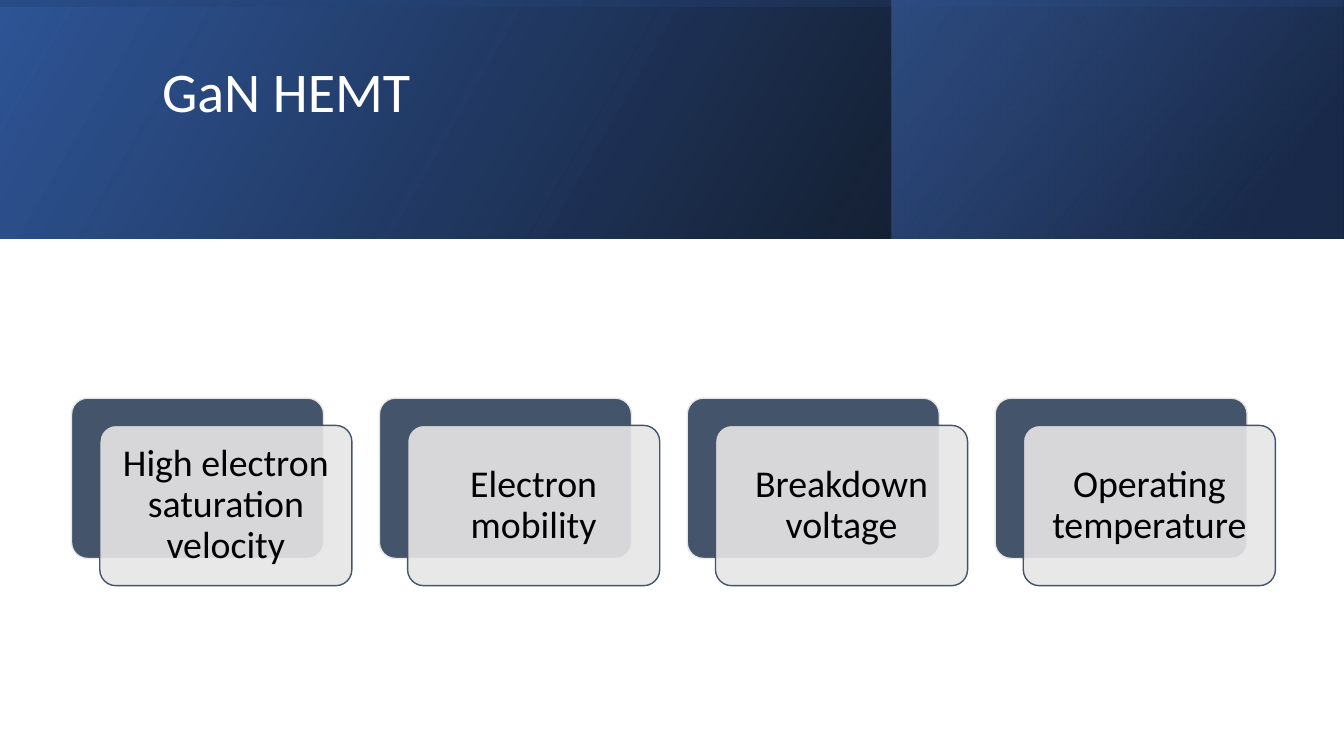
from lxml import etree
from pptx import Presentation
from pptx import util as u
from pptx.dml.color import RGBColor
from pptx.enum import shapes, text
from pptx.oxml import ns

BLACK = RGBColor(0x00, 0x00, 0x00)
WHITE = RGBColor(0xFF, 0xFF, 0xFF)
NAVY = RGBColor(0x20, 0x38, 0x64)
BLUE = RGBColor(0x2F, 0x55, 0x97)
SKY = RGBColor(0x44, 0x72, 0xC4)
SLATE = RGBColor(0x44, 0x54, 0x6A)
PALE = RGBColor(0xE7, 0xE6, 0xE6)

FONT = "Calibri"
SLIDE_WIDTH, SLIDE_HEIGHT = 13.33, 7.5
BANNER_HEIGHT = 2.37
ADVANTAGES = [
    "High electron saturation velocity",
    "Electron mobility",
    "Breakdown voltage",
    "Operating temperature",
]


def add_node(parent, tag, **attributes):
    """Append a DrawingML element to a parent and return it."""
    return etree.SubElement(parent, ns.qn(tag), attributes)


def add_panel(parent, kind, left, top, width, height):
    """Add a shadowless preset shape, measured in inches."""
    panel = parent.add_shape(kind, *map(u.Inches, (left, top, width, height)))
    panel.shadow.inherit = False
    return panel


def write_text(frame, wording, size, color, align, inset, space_after=0):
    """Write one middle-anchored paragraph with the given format."""
    frame.word_wrap = True
    frame.vertical_anchor = text.MSO_ANCHOR.MIDDLE
    (frame.margin_left, frame.margin_top,
     frame.margin_right, frame.margin_bottom) = map(u.Inches, inset)
    para = frame.paragraphs[0]
    para.alignment = align
    para.line_spacing = 0.9
    para.space_after = u.Pt(space_after)
    span = para.add_run()
    span.text = wording
    span.font.name = FONT
    span.font.size = u.Pt(size)
    span.font.color.rgb = color


def add_gradient_band(page, left, top, width, height, stops, angle, rotation=0):
    """Add a mirrored rectangle with a translucent linear gradient."""
    band = add_panel(page.shapes, shapes.MSO_SHAPE.RECTANGLE, left, top, width, height)
    band.rotation = rotation
    band.line.fill.background()
    properties = band._element.spPr
    properties.find(ns.qn("a:xfrm")).set("flipH", "1")
    gradient = etree.Element(ns.qn("a:gradFill"), rotWithShape="1")
    stop_list = add_node(gradient, "a:gsLst")
    for position, color, opacity in stops:
        stop = add_node(stop_list, "a:gs", pos=str(position * 1000))
        tint = add_node(stop, "a:srgbClr", val=str(color))
        add_node(tint, "a:alpha", val=str(opacity * 1000))
    add_node(gradient, "a:lin", ang=str(angle * 60000), scaled="0")
    properties.find(ns.qn("a:prstGeom")).addnext(gradient)


def add_banner(page, left, top, width, height, title):
    """Layer the gradient bands of the banner and set the title on them."""
    add_gradient_band(page, left, top, width, height,
                      [(0, BLACK, 96), (100, BLUE, 100)], 330)
    add_gradient_band(page, left + 8.84, top, 4.48, height,
                      [(19, NAVY, 68), (100, SKY, 48)], 320)
    add_gradient_band(page, left + (width - height) / 2, top - (width - height) / 2,
                      height, width, [(23, BLUE, 16), (99, BLACK, 45)], 350, 270)
    box = page.shapes.add_textbox(*map(u.Inches, (left + 1.51, top + 0.38, 10.63, 1.72)))
    write_text(box.text_frame, title, size=40, color=WHITE,
               align=text.PP_ALIGN.LEFT, inset=(0.1, 0.05, 0.1, 0.66))


def add_card(page, left, top, width, height, wording):
    """Add a pale labelled card offset over a dark one."""
    offset_x, offset_y = 0.28, 0.27
    group = page.shapes.add_group_shape()
    layers = []
    for step, fill, line in ((0, SLATE, PALE), (1, PALE, SLATE)):
        layer = add_panel(group.shapes, shapes.MSO_SHAPE.ROUNDED_RECTANGLE,
                          left + step * offset_x, top + step * offset_y,
                          width - offset_x, height - offset_y)
        layer.adjustments[0] = 0.1
        layer.fill.solid()
        layer.fill.fore_color.rgb = fill
        layer.line.color.rgb = line
        layer.line.width = u.Pt(1)
        layers.append(layer)
    front = layers[-1]
    tint = front._element.spPr.find(ns.qn("a:solidFill"))[0]
    add_node(tint, "a:alpha", val="90000")
    write_text(front.text_frame, wording, size=27, color=BLACK,
               align=text.PP_ALIGN.CENTER, inset=[0.11] * 4, space_after=9.45)


def add_card_row(page, left, top, width, height, labels):
    """Spread equal cards across the box."""
    card_width = 2.78
    pitch = (width - card_width) / (len(labels) - 1)
    for index, label in enumerate(labels):
        add_card(page, left + index * pitch, top, card_width, height, label)


def main():
    """Build the slide and save it."""
    deck = Presentation()
    deck.slide_width = u.Inches(SLIDE_WIDTH)
    deck.slide_height = u.Inches(SLIDE_HEIGHT)
    page = deck.slides.add_slide(deck.slide_layouts[6])
    add_banner(page, 0, 0, SLIDE_WIDTH, BANNER_HEIGHT, "GaN HEMT")
    add_card_row(page, 0.71, 3.95, 11.94, 1.86, ADVANTAGES)
    deck.save("out.pptx")


if __name__ == "__main__":
    main()
